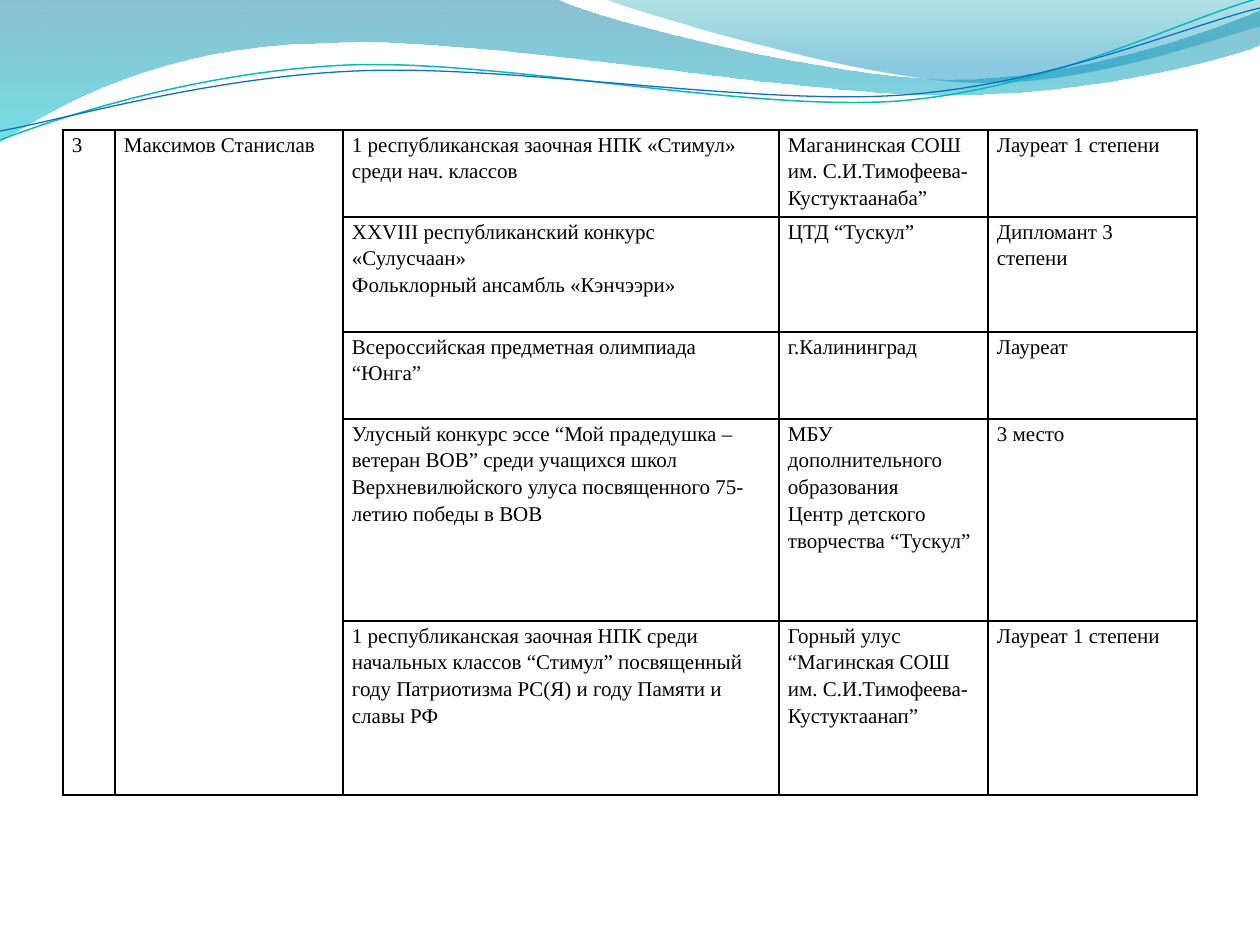
import pptx
import pptx.dml.color
import pptx.oxml
import pptx.oxml.ns
import pptx.util

PX = 914400 / 126
FONT = "Times New Roman"
BLACK = "000000"
NS = pptx.oxml.ns.nsdecls("a")

BAND = [(0, 0), (556, -1), (600, 21, 837, 79, 955, 79), (1074, 79, 1207, 33, 1260, 11),
        (1261, 45), (1239, 55, 1096, 96, 940, 95), (784, 94, 481, 35, 324, 43),
        (163, 45, 58, 105, -1, 142)]
SHEET = [(604, -1), (641, 14, 859, 78, 969, 82), (1079, 87, 1211, 40, 1260, 26), (1260, 0)]
TEAL_WAVE = [(0, 140), (60, 117, 199, 71, 349, 65), (498, 59, 747, 112, 898, 101),
             (1050, 89, 1182, 19, 1260, -2)]
BLUE_WAVE = [(0, 131), (59, 121, 207, 77, 357, 71), (508, 64, 752, 106, 903, 95),
             (1053, 84, 1186, 26, 1260, 8)]

COLUMNS = [52, 228, 436, 209, 209]
ROWS = [87, 115, 87, 202, 174]
PUPIL = ["3", "Максимов Станислав"]
AWARDS = [
    ["1 республиканская заочная НПК «Стимул» среди нач. классов",
     "Маганинская СОШ им. С.И.Тимофеева-Кустуктаанаба”",
     "Лауреат 1 степени"],
    ["XXVIII республиканский конкурс «Сулусчаан»\nФольклорный ансамбль «Кэнчээри»",
     "ЦТД “Тускул”",
     "Дипломант 3 степени"],
    ["Всероссийская предметная олимпиада “Юнга”",
     "г.Калининград",
     "Лауреат"],
    ["Улусный конкурс эссе “Мой прадедушка – ветеран ВОВ” среди учащихся школ "
     "Верхневилюйского улуса посвященного 75-летию победы в ВОВ",
     "МБУ дополнительного образования\nЦентр детского творчества “Тускул”",
     "3 место"],
    ["1 республиканская заочная НПК среди начальных классов “Стимул” посвященный "
     "году Патриотизма РС(Я) и году Памяти и славы РФ",
     "Горный улус\n“Магинская СОШ им. С.И.Тимофеева-Кустуктаанап”",
     "Лауреат 1 степени"],
]


def px(n):
    """Turn pixels into EMU."""
    return pptx.util.Emu(round(n * PX))


def rgb(value):
    """Turn a hex string into a colour."""
    return pptx.dml.color.RGBColor.from_string(value)


def curve_xml(sp, segment):
    """Return a cubic Bézier segment in the local units of a freeform."""
    points = "".join(f'<a:pt x="{px(x) - sp.left}" y="{px(y) - sp.top}"/>'
                     for x, y in zip(segment[::2], segment[1::2]))
    return pptx.oxml.parse_xml(f"<a:cubicBezTo {NS}>{points}</a:cubicBezTo>")


def add_outline(slide, outline, close):
    """Add a freeform of straight and cubic Bézier segments."""
    anchors = [(px(segment[-2]), px(segment[-1])) for segment in outline]
    builder = slide.shapes.build_freeform(*anchors[0], scale=1.0)
    builder.add_line_segments(anchors[1:], close=close)
    sp = builder.convert_to_shape()
    sp.shadow.inherit = False
    lines = list(sp._element.iter(pptx.oxml.ns.qn("a:lnTo")))
    for line, segment in zip(lines, outline[1:]):
        if len(segment) == 6:
            line.getparent().replace(line, curve_xml(sp, segment))
    return sp


def add_wash(slide, outline, stops):
    """Add a closed shape with a translucent gradient running downwards."""
    sp = add_outline(slide, outline, True)
    sp.line.fill.background()
    sp.fill.gradient()
    sp.fill.gradient_angle = 270
    for stop, (position, color, opacity) in zip(sp.fill.gradient_stops, stops):
        stop.position = position
        stop.color.rgb = rgb(color)
    colors = sp._element.spPr.iter(pptx.oxml.ns.qn("a:srgbClr"))
    for clr, (position, color, opacity) in zip(colors, stops):
        clr.append(pptx.oxml.parse_xml(f'<a:alpha {NS} val="{opacity * 1000}"/>'))


def add_wave(slide, outline, color, width):
    """Add an open curved line."""
    sp = add_outline(slide, outline, False)
    sp.fill.background()
    sp.line.color.rgb = rgb(color)
    sp.line.width = pptx.util.Pt(width)


def set_borders(cell):
    """Draw thin black lines on all sides of a cell."""
    tcPr = cell._tc.get_or_add_tcPr()
    for i, side in enumerate(("lnL", "lnR", "lnT", "lnB")):
        tcPr.insert(i, pptx.oxml.parse_xml(
            f'<a:{side} {NS} w="12700"><a:solidFill>'
            f'<a:srgbClr val="{BLACK}"/></a:solidFill></a:{side}>'))


def fill_cell(cell, text):
    """Write and format the text of a cell."""
    tf = cell.text_frame
    tf.text = text
    for p in tf.paragraphs:
        p.line_spacing = 1.15
        for r in p.runs:
            r.font.name = FONT
            r.font.size = pptx.util.Pt(12)
            r.font.color.rgb = rgb(BLACK)


def add_awards_table(slide, left, top):
    """Add the table of awards, with the pupil's cells spanning all rows."""
    frame = slide.shapes.add_table(len(ROWS), len(COLUMNS), px(left), px(top),
                                   px(sum(COLUMNS)), px(sum(ROWS)))
    table = frame.table
    table.first_row = table.horz_banding = False
    for column, width in zip(table.columns, COLUMNS):
        column.width = px(width)
    for row, height in zip(table.rows, ROWS):
        row.height = px(height)
    for cell in table.iter_cells():
        cell.fill.background()
        cell.margin_left = cell.margin_right = px(9)
        cell.margin_top = cell.margin_bottom = 0
        set_borders(cell)
    for j, text in enumerate(PUPIL):
        table.cell(0, j).merge(table.cell(len(ROWS) - 1, j))
        fill_cell(table.cell(0, j), text)
    for i, award in enumerate(AWARDS):
        for j, text in enumerate(award, len(PUPIL)):
            fill_cell(table.cell(i, j), text)


def main():
    """Build the slide and save it."""
    prs = pptx.Presentation()
    prs.slide_width, prs.slide_height = px(1260), px(945)
    slide = prs.slides.add_slide(prs.slide_layouts[6])
    add_wash(slide, BAND, [(0, "0074A1", 45), (1, "00C6CF", 55)])
    add_wash(slide, SHEET, [(0, "00A1A9", 30), (0.8, "008BBF", 45)])
    add_wave(slide, TEAL_WAVE, "0AB8BF", 0.85)
    add_wave(slide, BLUE_WAVE, "0F6FC6", 0.75)
    add_awards_table(slide, 63, 130)
    prs.save("out.pptx")


if __name__ == "__main__":
    main()
